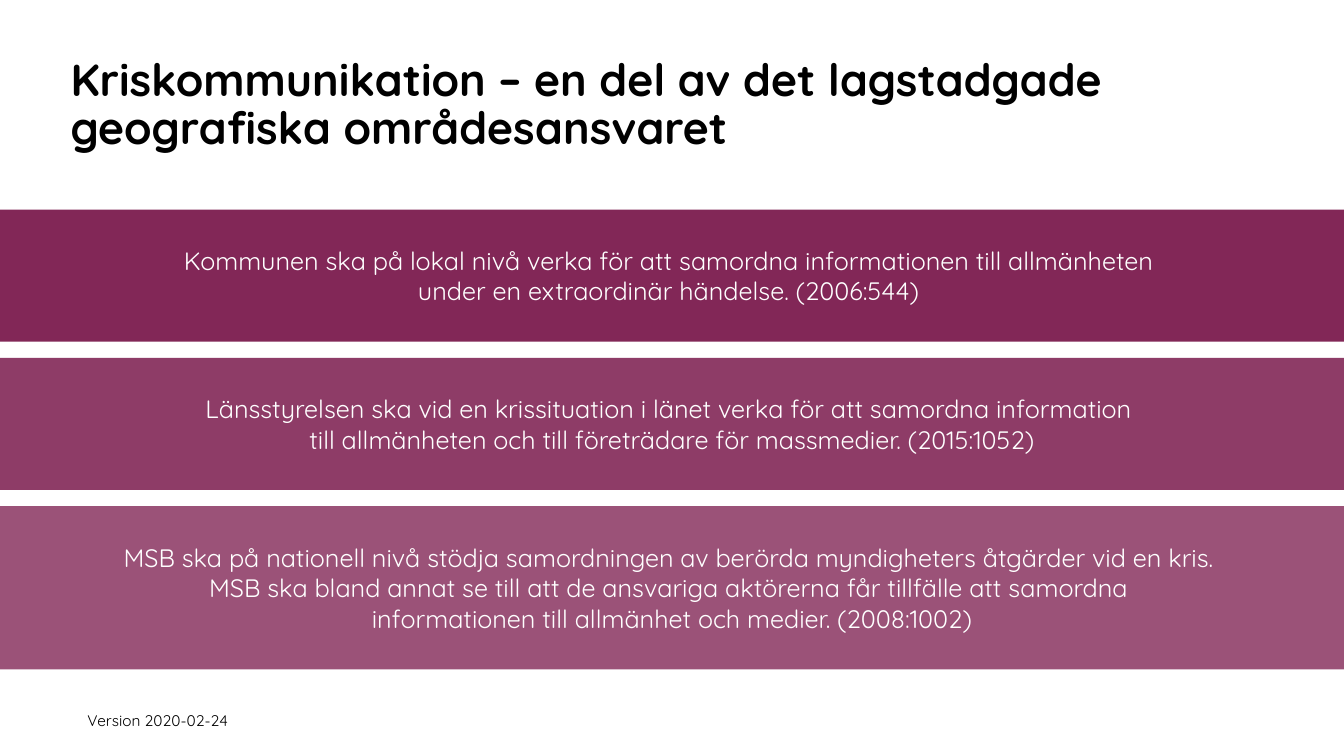
from dataclasses import dataclass

from lxml import etree
from pptx import Presentation
from pptx.dml.color import RGBColor
from pptx.enum import shapes, text
from pptx.oxml import ns
from pptx.util import Inches, Pt

PLUM = RGBColor(0x82, 0x27, 0x57)
WHITE = RGBColor(0xFF, 0xFF, 0xFF)
BLACK = RGBColor(0, 0, 0)
FONT = "Quicksand"
WIDTH = 13.33
TOP = 2.08
GAP = 0.16


@dataclass
class Band:
    height: float
    alpha: int
    lines: list[str]


BANDS = [
    Band(1.31, 100, [
        "Kommunen ska på lokal nivå verka för att samordna informationen till allmänheten ",
        "under en extraordinär händelse. (2006:544) ",
    ]),
    Band(1.31, 90, [
        "Länsstyrelsen ska vid en krissituation i länet verka för att samordna information ",
        "till allmänheten och till företrädare för massmedier. (2015:1052)",
    ]),
    Band(1.62, 80, [
        "MSB ska på nationell nivå stödja samordningen av berörda myndigheters åtgärder vid en kris. ",
        "MSB ska bland annat se till att de ansvariga aktörerna får tillfälle att samordna ",
        "informationen till allmänhet och medier. (2008:1002)",
    ]),
]


def write(frame, lines: list[str], size: int, color: RGBColor,
          align=text.PP_ALIGN.CENTER, anchor=text.MSO_ANCHOR.MIDDLE,
          bold: bool = False) -> None:
    frame.word_wrap = True
    frame.auto_size = text.MSO_AUTO_SIZE.NONE
    frame.vertical_anchor = anchor
    for num, line in enumerate(lines):
        para = frame.add_paragraph() if num else frame.paragraphs[0]
        para.alignment = align
        run = para.add_run()
        run.text = line
        run.font.name = FONT
        run.font.size = Pt(size)
        run.font.bold = bold
        run.font.color.rgb = color


def draw(slide, band: Band, top: float) -> None:
    bar = slide.shapes.add_shape(
        shapes.MSO_SHAPE.RECTANGLE, 0, Inches(top), Inches(WIDTH), Inches(band.height))
    bar.shadow.inherit = False
    bar.line.fill.background()
    bar.fill.solid()
    bar.fill.fore_color.rgb = PLUM
    if band.alpha < 100:
        color = bar.fill._xPr.find(".//" + ns.qn("a:srgbClr"))
        etree.SubElement(color, ns.qn("a:alpha"), val=str(band.alpha * 1000))
    write(bar.text_frame, band.lines, 18, WHITE)


def main() -> None:
    deck = Presentation()
    deck.slide_width, deck.slide_height = Inches(WIDTH), Inches(7.5)
    slide = deck.slides.add_slide(deck.slide_layouts[5])

    note = slide.shapes.add_textbox(Inches(0.51), Inches(6.81), Inches(2.11), Inches(0.67))
    write(note.text_frame, ["Version 2020-02-24"], 11, BLACK)

    title = slide.shapes.title
    title.left, title.top = Inches(0.6), Inches(0.52)
    title.width, title.height = Inches(11.5), Inches(0.56)
    write(title.text_frame,
          ["Kriskommunikation – en del av det lagstadgade geografiska områdesansvaret"],
          32, BLACK, text.PP_ALIGN.LEFT, text.MSO_ANCHOR.TOP, True)
    title.text_frame.paragraphs[0].line_spacing = 0.9

    top = TOP
    for band in BANDS:
        draw(slide, band, top)
        top += band.height + GAP

    deck.save("out.pptx")


if __name__ == "__main__":
    main()
